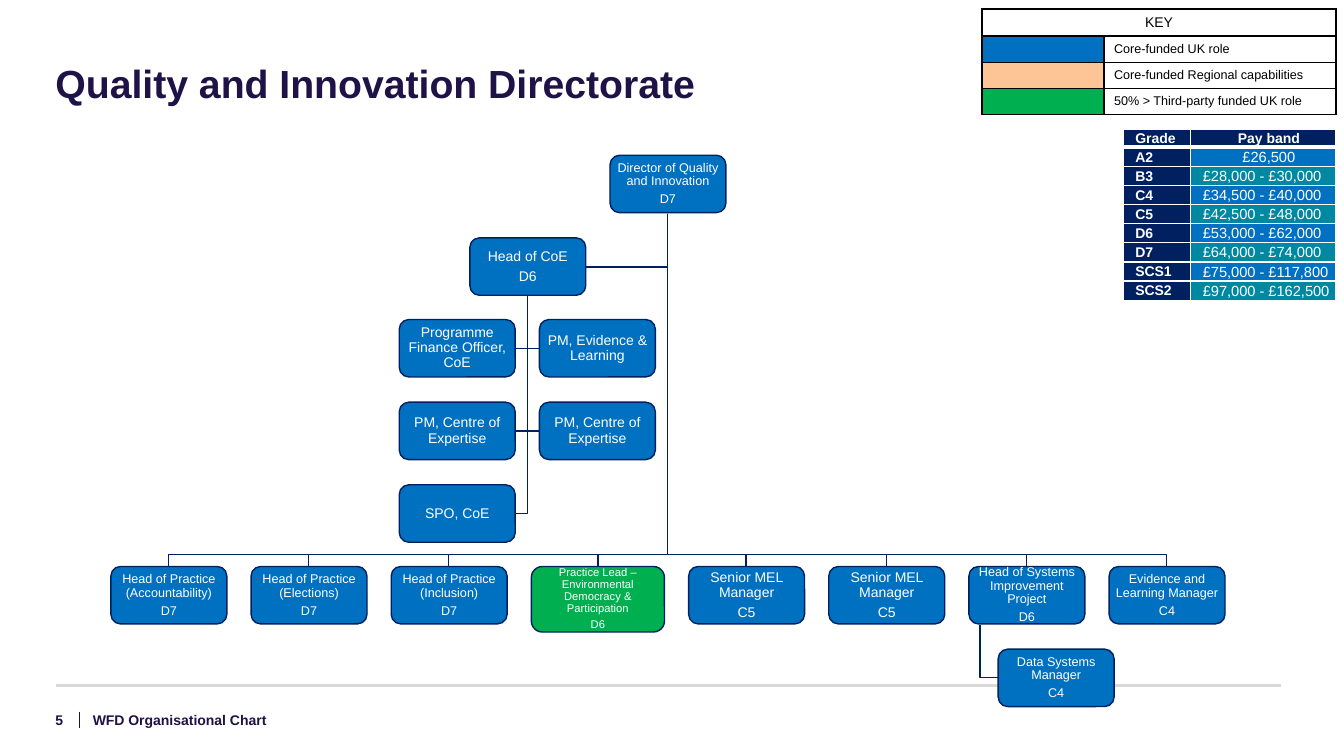
"""Build the Quality and Innovation Directorate organisation chart slide."""
from lxml.etree import SubElement as Sub
from pptx import Presentation
from pptx.dml.color import RGBColor as Rgb
from pptx.enum.shapes import MSO_CONNECTOR as Link, MSO_SHAPE as Form
from pptx.enum.text import MSO_ANCHOR as Anchor, PP_ALIGN as Align
from pptx.oxml.ns import qn
from pptx.util import Inches, Pt

HUES = {"ink": "1E1246", "navy": "002060", "blue": "0070C0", "green": "00B050",
        "peach": "FDC595", "teal": "0088A2", "grey": "D9D9D9",
        "white": "FFFFFF", "black": "000000"}
FLUSH = {"margin_left": 0, "margin_right": 0, "margin_top": 0, "margin_bottom": 0}
TIGHT = {side: Inches(0.01) for side in FLUSH}
BAND = {"margin_left": Inches(0.12), "margin_right": Inches(0.01),
        "margin_top": Inches(0.01), "margin_bottom": 0}


def put(par, text, size, hue, bold=False, **look):
    for name, value in look.items():
        setattr(par, name, value)
    run = par.add_run()
    run.text = text
    for name, value in {"name": "Arial", "size": Pt(size), "bold": bold}.items():
        setattr(run.font, name, value)
    run.font.color.rgb = Rgb.from_string(HUES[hue])


def dress(cell, edge, fill, low=1):
    cell.vertical_anchor = Anchor.MIDDLE
    props = cell._tc.get_or_add_tcPr()
    for side, width in {"L": 1, "R": 1, "T": 1, "B": low}.items():
        line = Sub(props, qn("a:ln" + side), w=str(Pt(width)))
        Sub(Sub(line, qn("a:solidFill")), qn("a:srgbClr"), val=HUES[edge])
    if fill:
        cell.fill.solid()
        cell.fill.fore_color.rgb = Rgb.from_string(HUES[fill])
    else:
        cell.fill.background()


deck = Presentation()
deck.slide_width, deck.slide_height = Inches(13.33), Inches(7.5)
slide = deck.slides.add_slide(deck.slide_layouts[5])
shapes = slide.shapes

rules = [((0.79, 7.06, 0.79, 7.22), "ink", 0.75), ((0.56, 6.8, 12.71, 6.8), "grey", 2)]
for ends, hue, width in rules:
    rule = shapes.add_connector(Link.STRAIGHT, *map(Inches, ends))
    rule.line.color.rgb = Rgb.from_string(HUES[hue])
    rule.line.width = Pt(width)
    Sub(rule._element.spPr, qn("a:effectLst"))

title = shapes.title
title.left, title.top, title.width, title.height = map(Inches, (0.55, 0.64, 12.15, 1))
for name, value in {**FLUSH, "vertical_anchor": Anchor.TOP, "word_wrap": True}.items():
    setattr(title.text_frame, name, value)
put(title.text_frame.paragraphs[0], "Quality and Innovation Directorate", 28, "ink", True,
    alignment=Align.LEFT, line_spacing=0.9)

for text, left, width in [("WFD Organisational Chart", 0.92, 5.08), ("5", 0.55, 0.37)]:
    frame = shapes.add_textbox(Inches(left), Inches(7.02), Inches(width), Inches(0.24)).text_frame
    for name, value in {**FLUSH, "vertical_anchor": Anchor.MIDDLE, "word_wrap": True}.items():
        setattr(frame, name, value)
    put(frame.paragraphs[0], text, 10, "ink", True)

tops = [1.54, 2.36, 3.17, 3.99, 4.81, 5.62, 6.44]
wide, tall, step = 1.15, 0.57, 1.39
trunk, stem, bus = 6.62, 5.23, 5.5
left_side, right_side = 3.96, 3.96 + step

paths = []
for row, side in [(4, -1), (3, 1), (3, -1), (2, 1), (2, -1)]:
    mid = tops[row] + tall / 2
    paths.append([(stem, 2.93), (stem, mid), (stem + side * 0.12, mid)])
paths.append([(trunk, 2.12), (trunk, 2.65), (5.81, 2.65)])
paths.append([(9.72, 6.2), (9.72, 6.72), (9.9, 6.72)])
for end in [11.57, 10.18, 8.79, 7.4, 5.93, 4.45, 3.06, 1.67]:
    paths.append([(trunk, 2.12), (trunk, bus), (end, bus), (end, tops[5])])
for path in paths:
    start, *rest = [(Inches(x), Inches(y)) for x, y in path]
    pen = shapes.build_freeform(*start)
    pen.add_line_segments(rest, close=False)
    elbow = pen.convert_to_shape()
    elbow.shadow.inherit = False
    elbow.fill.background()
    elbow.line.color.rgb = Rgb.from_string(HUES["navy"])
    elbow.line.width = Pt(1)

staff = [
    (["Director of Quality and Innovation", "D7"], 6.05, 0, 9),
    (["Head of Practice (Accountability)", "D7"], 1.1, 5, 9),
    (["Head of Practice (Elections)", "D7"], 1.1 + step, 5, 9),
    (["Head of Practice (Inclusion)", "D7"], 1.1 + 2 * step, 5, 9),
    (["Practice Lead – Environmental Democracy & Participation", "D6"], 5.27, 5, 8),
    (["Senior MEL Manager", "C5"], 6.83, 5, 10),
    (["Senior MEL Manager", "C5"], 6.83 + step, 5, 10),
    (["Head of Systems Improvement Project", "D6"], 6.83 + 2 * step, 5, 9),
    (["Data Systems Manager", "C4"], 9.9, 6, 9),
    (["Evidence and Learning Manager", "C4"], 6.83 + 3 * step, 5, 9),
    (["Head of CoE", "D6"], 4.66, 1, 10),
    (["Programme Finance Officer, CoE"], left_side, 2, 10),
    (["PM, Evidence & Learning"], right_side, 2, 10),
    (["PM, Centre of Expertise"], left_side, 3, 10),
    (["PM, Centre of Expertise"], right_side, 3, 10),
    (["SPO, CoE"], left_side, 4, 10),
]
for lines, left, row, size in staff:
    lead = lines[0].startswith("Practice Lead")
    area = (left, tops[row], 1.32 if lead else wide, 0.65 if lead else tall)
    box = shapes.add_shape(Form.ROUNDED_RECTANGLE, *map(Inches, area))
    box.shadow.inherit = False
    box.fill.solid()
    box.fill.fore_color.rgb = Rgb.from_string(HUES["green" if lead else "blue"])
    box.line.color.rgb = Rgb.from_string(HUES["navy"])
    box.line.width = Pt(1)
    frame = box.text_frame
    for name, value in {**TIGHT, "vertical_anchor": Anchor.MIDDLE, "word_wrap": True}.items():
        setattr(frame, name, value)
    for place, text in enumerate(lines):
        par = frame.add_paragraph() if place else frame.paragraphs[0]
        put(par, text, size, "white", alignment=Align.CENTER,
            line_spacing=0.9, space_after=Pt(0.35 * size))

legend = [("blue", "Core-funded UK role"), ("peach", "Core-funded Regional capabilities"),
          ("green", "50% > Third-party funded UK role")]
key = shapes.add_table(4, 2, *map(Inches, (9.74, 0.09, 3.51, 1.04))).table
key.columns[0].width, key.columns[1].width = Inches(1.21), Inches(2.3)
for cell in key.iter_cells():
    dress(cell, "black", None)
key.cell(0, 0).merge(key.cell(0, 1))
put(key.cell(0, 0).text_frame.paragraphs[0], "KEY", 10, "black", alignment=Align.CENTER)
for row, (hue, text) in enumerate(legend, 1):
    swatch = key.cell(row, 0)
    swatch.fill.solid()
    swatch.fill.fore_color.rgb = Rgb.from_string(HUES[hue])
    swatch.text_frame.paragraphs[0]._p.get_or_add_endParaRPr().set("sz", "900")
    put(key.cell(row, 1).text_frame.paragraphs[0], text, 9, "black")

bands = [("Grade", "Pay band"), ("A2", "£26,500"), ("B3", "£28,000 - £30,000"),
         ("C4", "£34,500 - £40,000"), ("C5", "£42,500 - £48,000"),
         ("D6", "£53,000 - £62,000"), ("D7", "£64,000 - £74,000"),
         ("SCS1", "£75,000 - £117,800"), ("SCS2", "£97,000 - £162,500")]
pay = shapes.add_table(len(bands), 2, *map(Inches, (11.14, 1.28, 2.11, 1.7))).table
pay.columns[0].width, pay.columns[1].width = Inches(0.67), Inches(1.44)
for row, pair in enumerate(bands):
    pay.rows[row].height = Inches(0.19 if row else 0.18)
    for col, text in enumerate(pair):
        cell = pay.cell(row, col)
        head = row == 0 or col == 0
        dress(cell, "white", "navy" if head else ("teal", "blue")[row % 2], 1 if row else 3)
        for name, value in BAND.items():
            setattr(cell, name, value)
        put(cell.text_frame.paragraphs[0], text, 10 if head else 10.5, "white", head,
            alignment=Align.CENTER if col and row < 2 else Align.LEFT)

deck.save("out.pptx")
